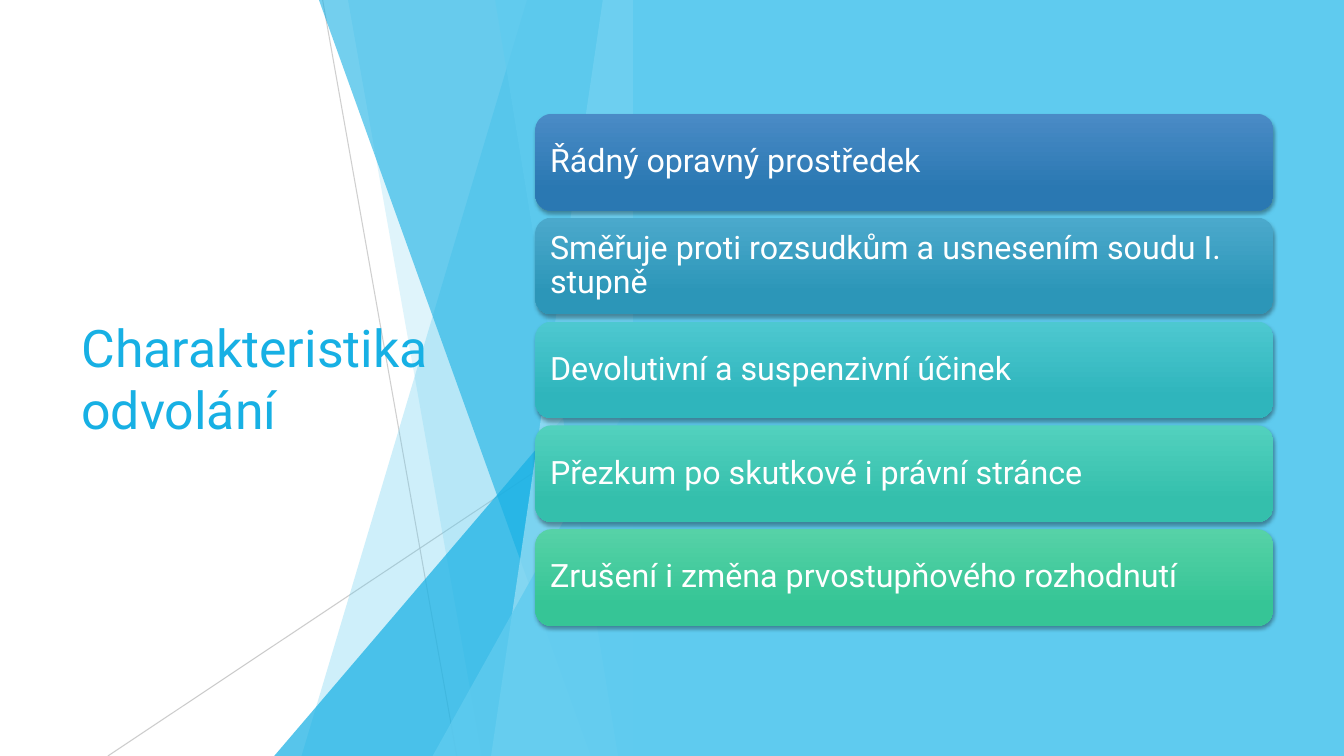
from lxml import etree
from pptx import Presentation
from pptx.dml.color import RGBColor
from pptx.enum.shapes import MSO_CONNECTOR, MSO_SHAPE
from pptx.enum.text import MSO_ANCHOR, PP_ALIGN
from pptx.oxml.ns import qn
from pptx.util import Inches, Pt

RECT = MSO_SHAPE.RECTANGLE
ROUND = MSO_SHAPE.ROUNDED_RECTANGLE
PEAK = MSO_SHAPE.ISOSCELES_TRIANGLE
STRAIGHT = MSO_CONNECTOR.STRAIGHT
MIDDLE = MSO_ANCHOR.MIDDLE
LEFT = PP_ALIGN.LEFT

WHITE = RGBColor(0xFF, 0xFF, 0xFF)
GREY = RGBColor(0xBF, 0xBF, 0xBF)
SKY = RGBColor(0x5F, 0xCB, 0xEF)
BLUE = RGBColor(0x17, 0xB0, 0xE4)
PALE = RGBColor(0x9F, 0xE0, 0xF5)

WIDTH, HEIGHT = 13.33, 7.5
EDGE = 6.28  # left side of the solid panel, where all facets end

BARS = [
    ("Řádný opravný prostředek",
     RGBColor(0x4A, 0x8B, 0xC6), RGBColor(0x2A, 0x78, 0xB2)),
    ("Směřuje proti rozsudkům a usnesením soudu I. stupně",
     RGBColor(0x4B, 0xA9, 0xCC), RGBColor(0x2C, 0x96, 0xB8)),
    ("Devolutivní a suspenzivní účinek",
     RGBColor(0x4D, 0xC8, 0xD0), RGBColor(0x2F, 0xB5, 0xBC)),
    ("Přezkum po skutkové i právní stránce",
     RGBColor(0x52, 0xD1, 0xBE), RGBColor(0x34, 0xBF, 0xAC)),
    ("Zrušení i změna prvostupňového rozhodnutí",
     RGBColor(0x56, 0xD2, 0xA7), RGBColor(0x36, 0xC5, 0x96)),
]
BAR_TOP, BAR_STEP = 1.13, 1.03


class Deck:
    font = "Roboto"

    def __init__(self):
        self.show = Presentation()
        self.show.slide_width = Inches(WIDTH)
        self.show.slide_height = Inches(HEIGHT)
        self.slide = self.show.slides.add_slide(self.show.slide_layouts[6])
        self.shapes = self.slide.shapes

    def fade(self, shape, alpha):
        """Set the opacity of the shape's colour, in percent."""
        color = shape.element.spPr.find(".//" + qn("a:srgbClr"))
        etree.SubElement(color, qn("a:alpha"), val=str(alpha * 1000))

    def paint(self, shape, color, alpha=100):
        shape.shadow.inherit = False
        shape.line.fill.background()
        shape.fill.solid()
        shape.fill.fore_color.rgb = color
        if alpha < 100:
            self.fade(shape, alpha)

    def line(self, x1, y1, x2, y2, alpha):
        line = self.shapes.add_connector(
            STRAIGHT, Inches(x1), Inches(y1), Inches(x2), Inches(y2))
        line.line.color.rgb = GREY
        line.line.width = Pt(0.75)
        self.fade(line, alpha)
        etree.SubElement(line.element.spPr, qn("a:effectLst"))

    def panel(self, x, y, width, height, color):
        panel = self.shapes.add_shape(
            RECT, Inches(x), Inches(y), Inches(width), Inches(height))
        self.paint(panel, color)

    def facet(self, top, foot, color, alpha):
        """Full-height facet with a slanted left side, from top x to foot x."""
        points = [(EDGE, -0.01), (EDGE, HEIGHT), (foot, HEIGHT)]
        outline = self.shapes.build_freeform(
            Inches(top), Inches(-0.01), scale=1.0)
        outline.add_line_segments([(Inches(x), Inches(y)) for x, y in points])
        self.paint(outline.convert_to_shape(), color, alpha)

    def peak(self, x, y, color, alpha):
        """Triangle rising from the slide's foot to the panel edge."""
        peak = self.shapes.add_shape(
            PEAK, Inches(x), Inches(y), Inches(EDGE - x), Inches(HEIGHT - y))
        peak.adjustments[0] = 1
        self.paint(peak, color, alpha)

    def label(self, shape, text, size, color):
        frame = shape.text_frame
        frame.word_wrap = True
        frame.vertical_anchor = MIDDLE
        frame.text = text
        para = frame.paragraphs[0]
        para.alignment = LEFT
        font = para.runs[0].font
        font.name, font.size, font.color.rgb = self.font, Pt(size), color
        return para

    def title(self, text, x, y, width, height):
        box = self.shapes.add_textbox(
            Inches(x), Inches(y), Inches(width), Inches(height))
        self.label(box, text, 37, BLUE)

    def bar(self, text, y, light, dark):
        bar = self.shapes.add_shape(
            ROUND, Inches(5.31), Inches(y), Inches(7.32), Inches(0.96))
        bar.line.fill.background()
        bar.fill.gradient()
        bar.fill.gradient_angle = 270
        for stop, place, color in zip(
                bar.fill.gradient_stops, (0, 0.78), (light, dark)):
            stop.position = place
            stop.color.rgb = color
        self.shade(bar)
        frame = bar.text_frame
        frame.margin_left = frame.margin_right = Inches(0.1)
        frame.margin_top = frame.margin_bottom = Inches(0.1)
        self.label(bar, text, 23, WHITE).line_spacing = 0.9

    def shade(self, shape):
        """Add a soft shadow straight below the shape."""
        shape.shadow.inherit = False
        effects = shape.element.spPr.find(qn("a:effectLst"))
        outer = etree.SubElement(
            effects, qn("a:outerShdw"), blurRad=str(Pt(3)), dist=str(Pt(2)),
            dir="5400000", rotWithShape="0")
        color = etree.SubElement(outer, qn("a:srgbClr"), val="000000")
        etree.SubElement(color, qn("a:alpha"), val="35000")


def main():
    deck = Deck()
    deck.panel(0, 0, WIDTH, HEIGHT, WHITE)
    deck.line(3.2, 0, 4.53, HEIGHT, 75)
    deck.line(EDGE, 4.03, 1.07, HEIGHT, 80)
    deck.facet(5.23, 2.99, SKY, 30)
    deck.facet(3.45, 4.78, SKY, 20)
    deck.peak(2.72, 3.33, BLUE, 72)
    deck.facet(3.16, 5.86, BLUE, 60)
    deck.facet(5.98, 4.87, PALE, 70)
    deck.facet(4.91, 6.13, SKY, 65)
    deck.peak(4.29, 3.93, SKY, 80)
    deck.title("Charakteristika odvolání", 0.71, 1.51, 3.88, 4.48)
    deck.panel(EDGE, 0, WIDTH - EDGE, HEIGHT, SKY)
    for row, (text, light, dark) in enumerate(BARS):
        deck.bar(text, BAR_TOP + row * BAR_STEP, light, dark)
    deck.show.save("out.pptx")


if __name__ == "__main__":
    main()
